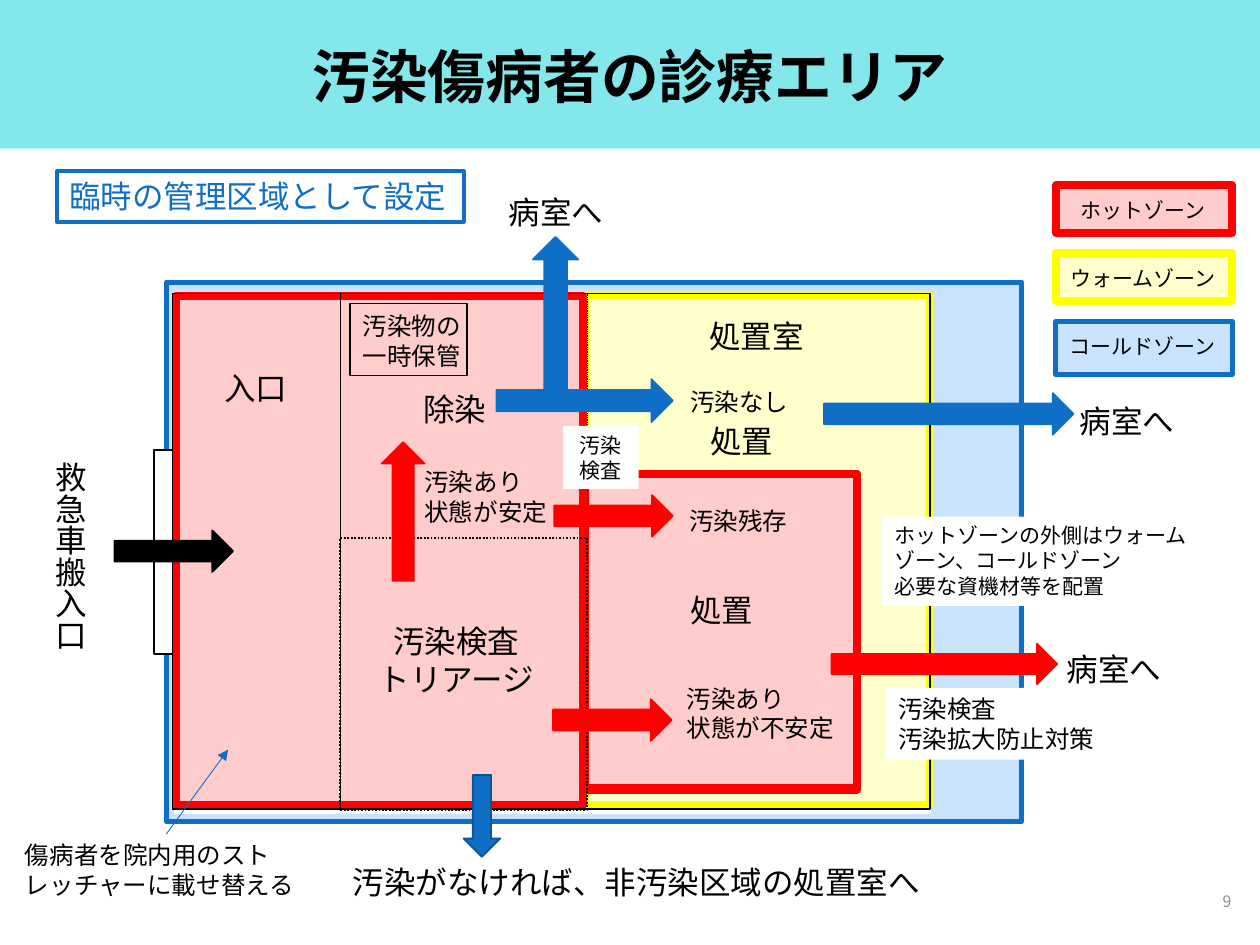
from lxml.etree import SubElement
from pptx import Presentation
from pptx.dml.color import RGBColor
from pptx.enum.dml import MSO_LINE
from pptx.enum.shapes import MSO_CONNECTOR, MSO_SHAPE
from pptx.enum.text import MSO_ANCHOR, MSO_AUTO_SIZE, PP_ALIGN
from pptx.oxml.ns import qn
from pptx.util import Inches, Pt

FONT = "Noto Sans CJK JP"
BLACK = RGBColor(0x00, 0x00, 0x00)
WHITE = RGBColor(0xFF, 0xFF, 0xFF)
GREY = RGBColor(0x8C, 0x8C, 0x8C)
TURQUOISE = RGBColor(0x0B, 0xD0, 0xD9)
RED = RGBColor(0xFF, 0x00, 0x00)
YELLOW = RGBColor(0xFF, 0xFF, 0x00)
BLUE = RGBColor(0x0F, 0x6F, 0xC6)
DARK_BLUE = RGBColor(0x0B, 0x52, 0x92)
PALE_BLUE = RGBColor(0xC8, 0xE3, 0xFB)

# Fill, fill opacity in percent, line colour, line width
HOT = (RED, 20, RED, 4.5)
WARM = (YELLOW, 20, YELLOW, 4.5)
COLD = (PALE_BLUE, 100, BLUE, 3)
BLANK = (WHITE, 100, None, 0)
OUTLINE = (None, 100, BLACK, 1)


def paint(shape, fill, opacity, line, width):
    if fill is None:
        shape.fill.background()
    else:
        shape.fill.solid()
        shape.fill.fore_color.rgb = fill
        if opacity < 100:
            color = shape.fill._xPr.find(qn("a:solidFill"))[0]
            SubElement(color, qn("a:alpha"), val=str(opacity * 1000))
    if line is None:
        shape.line.fill.background()
    else:
        shape.line.color.rgb = line
        shape.line.width = Pt(width)


def add_preset(page, preset, place, style):
    shape = page.shapes.add_shape(preset, *map(Inches, place))
    shape.shadow.inherit = False
    paint(shape, *style)
    return shape


def add_area(page, place, style):
    return add_preset(page, MSO_SHAPE.RECTANGLE, place, style)


def add_arrow(page, place, color, preset=MSO_SHAPE.RIGHT_ARROW, edge=None):
    return add_preset(page, preset, place, (color, 100, edge or color, 1))


def add_thin_line(page, start, end, color=BLACK, dotted=False, arrow=False):
    line = page.shapes.add_connector(
        MSO_CONNECTOR.STRAIGHT, *map(Inches, start + end))
    line.line.color.rgb = color
    line.line.width = Pt(0.5)
    if dotted:
        line.line.dash_style = MSO_LINE.ROUND_DOT
    if arrow:
        SubElement(line.line._get_or_add_ln(), qn("a:tailEnd"), type="triangle")
    SubElement(line._element.spPr, qn("a:effectLst"))


def add_label(page, place, lines, size=18, color=BLACK, align=PP_ALIGN.LEFT,
              wrap=False, grow=True, bold=False):
    """Add a text box with one paragraph for each entry of lines."""
    box = page.shapes.add_textbox(*map(Inches, place))
    frame = box.text_frame
    frame.word_wrap = wrap
    if grow:
        frame.auto_size = MSO_AUTO_SIZE.SHAPE_TO_FIT_TEXT
    else:
        frame.vertical_anchor = MSO_ANCHOR.MIDDLE
    for index, words in enumerate(lines):
        para = frame.add_paragraph() if index else frame.paragraphs[0]
        para.alignment = align
        span = para.add_run()
        span.text = words
        span.font.size = Pt(size)
        span.font.bold = bold
        span.font.color.rgb = color
        span.font.name = FONT
        SubElement(span.font._element, qn("a:ea"), typeface=FONT)
    return box


def add_header(page):
    add_area(page, (0, 0, 10, 1.18), (TURQUOISE, 50, None, 0))
    title = add_label(page, (0.69, 0.21, 8.62, 0.85), ["汚染傷病者の診療エリア"],
                      33, align=PP_ALIGN.CENTER, wrap=True, grow=False, bold=True)
    title.text_frame.paragraphs[0].line_spacing = 0.9
    add_label(page, (7.62, 6.95, 2.25, 0.4), ["9"], 9, GREY,
              PP_ALIGN.RIGHT, wrap=True, grow=False)
    notice = add_label(page, (0.45, 1.36, 3.23, 0.4),
                       ["臨時の管理区域として設定"], color=BLUE)
    paint(notice, None, 100, BLUE, 2.25)


def add_floor_plan(page):
    add_area(page, (1.32, 2.24, 6.79, 4.28), COLD)
    add_area(page, (1.38, 2.33, 6.01, 4.13), BLANK)
    add_area(page, (4.64, 2.34, 2.74, 4.05), WARM)
    add_area(page, (4.64, 3.76, 2.16, 2.51), (WHITE, 100, RED, 4.5))
    add_area(page, (4.64, 3.76, 2.16, 2.49), HOT)
    add_area(page, (1.4, 2.35, 3.23, 4.04), HOT)
    add_area(page, (1.22, 3.57, 0.15, 1.62), (WHITE, 100, BLACK, 1))
    triage = add_area(page, (2.7, 4.27, 1.96, 2.16), OUTLINE)
    triage.line.dash_style = MSO_LINE.ROUND_DOT
    add_thin_line(page, (4.66, 2.33), (4.66, 4.1), dotted=True)
    add_thin_line(page, (2.7, 2.33), (2.7, 6.42))
    add_area(page, (2.78, 2.41, 0.93, 0.57), OUTLINE)
    add_area(page, (1.37, 2.33, 6.01, 4.09), OUTLINE)


def add_patient_flow(page):
    add_thin_line(page, (1.32, 6.62), (1.81, 5.95), BLUE, arrow=True)
    add_arrow(page, (3.68, 6.15, 0.29, 0.65), BLUE, MSO_SHAPE.DOWN_ARROW, DARK_BLUE)
    add_arrow(page, (3.03, 3.51, 0.34, 1.1), RED, MSO_SHAPE.UP_ARROW)
    for place, color in (
        ((0.91, 4.21, 0.94, 0.33), BLACK),
        ((4.39, 5.55, 0.94, 0.33), RED),
        ((4.4, 3.93, 0.94, 0.33), RED),
        ((6.6, 5.11, 1.79, 0.32), RED),
        ((3.94, 3.01, 1.4, 0.34), BLUE),
        ((6.54, 3.12, 1.98, 0.33), BLUE),
    ):
        add_arrow(page, place, color)
    to_ward = add_arrow(page, (3.8, 2.31, 1.22, 0.36), BLUE)
    to_ward.rotation = 270


def add_room_labels(page):
    for place, words in (
        ((1.68, 2.88, 0.71, 0.4), "入口"),
        ((3.26, 3.05, 0.71, 0.4), "除染"),
        ((5.53, 2.47, 0.96, 0.4), "処置室"),
        ((5.54, 3.3, 1.03, 0.4), "処置"),
        ((5.38, 4.64, 1.03, 0.4), "処置"),
        ((2.7, 6.8, 4.75, 0.4), "汚染がなければ、非汚染区域の処置室へ"),
    ):
        add_label(page, place, [words], wrap=words == "処置")
    for left, top in ((3.94, 1.48), (8.47, 3.14), (8.37, 5.11)):
        add_label(page, (left, top, 0.96, 0.4), ["病室へ"])
    add_label(page, (2.89, 4.89, 1.46, 0.71), ["汚染検査", "トリアージ"],
              align=PP_ALIGN.CENTER)
    entrance = add_label(page, (0.26, 3.57, 0.5, 1.62), ["救急車搬入口"])
    entrance.text_frame._txBody.bodyPr.set("vert", "eaVert")


def add_remarks(page):
    for place, lines, wrap in (
        ((0.1, 6.62, 2.44, 0.57), ["傷病者を院内用のストレッチャーに載せ替える"], True),
        ((2.78, 2.42, 1.1, 0.57), ["汚染物の一時保管"], True),
        ((3.27, 3.66, 1.18, 0.57), ["汚染あり", "状態が安定"], False),
        ((5.35, 5.38, 1.38, 0.57), ["汚染あり", "状態が不安定"], False),
        ((5.37, 3.97, 0.99, 0.34), ["汚染残存"], False),
        ((5.38, 3.02, 1.32, 0.34), ["汚染なし"], True),
    ):
        add_label(page, place, lines, 14, wrap=wrap)
    zones = add_label(page, (7, 4.1, 2.61, 0.71),
                      ["ホットゾーンの外側はウォームゾーン、コールドゾーン",
                       "必要な資機材等を配置"], 12, wrap=True)
    measures = add_label(page, (7.03, 5.46, 1.77, 0.57),
                         ["汚染検査", "汚染拡大防止対策"], 14)
    check = add_label(page, (4.47, 3.38, 0.6, 0.5), ["汚染", "検査"], 12,
                      align=PP_ALIGN.CENTER, wrap=True)
    for box in (zones, measures, check):
        paint(box, *BLANK)


def add_legend(page):
    for index, (words, style, height) in enumerate((
        ("ホットゾーン", HOT, 0.38),
        ("ウォームゾーン", WARM, 0.38),
        ("コールドゾーン", COLD, 0.42),
    )):
        top = 1.47 + 0.54 * index
        add_area(page, (8.38, top, 1.4, height), style)
        add_label(page, (8.38, top + 0.05, 1.38, 0.3), [words], 12,
                  align=PP_ALIGN.CENTER, wrap=True)


def main():
    deck = Presentation()
    deck.slide_width, deck.slide_height = Inches(10), Inches(7.5)
    page = deck.slides.add_slide(deck.slide_layouts[6])
    add_header(page)
    add_floor_plan(page)
    add_patient_flow(page)
    add_room_labels(page)
    add_remarks(page)
    add_legend(page)
    deck.save("out.pptx")


if __name__ == "__main__":
    main()
